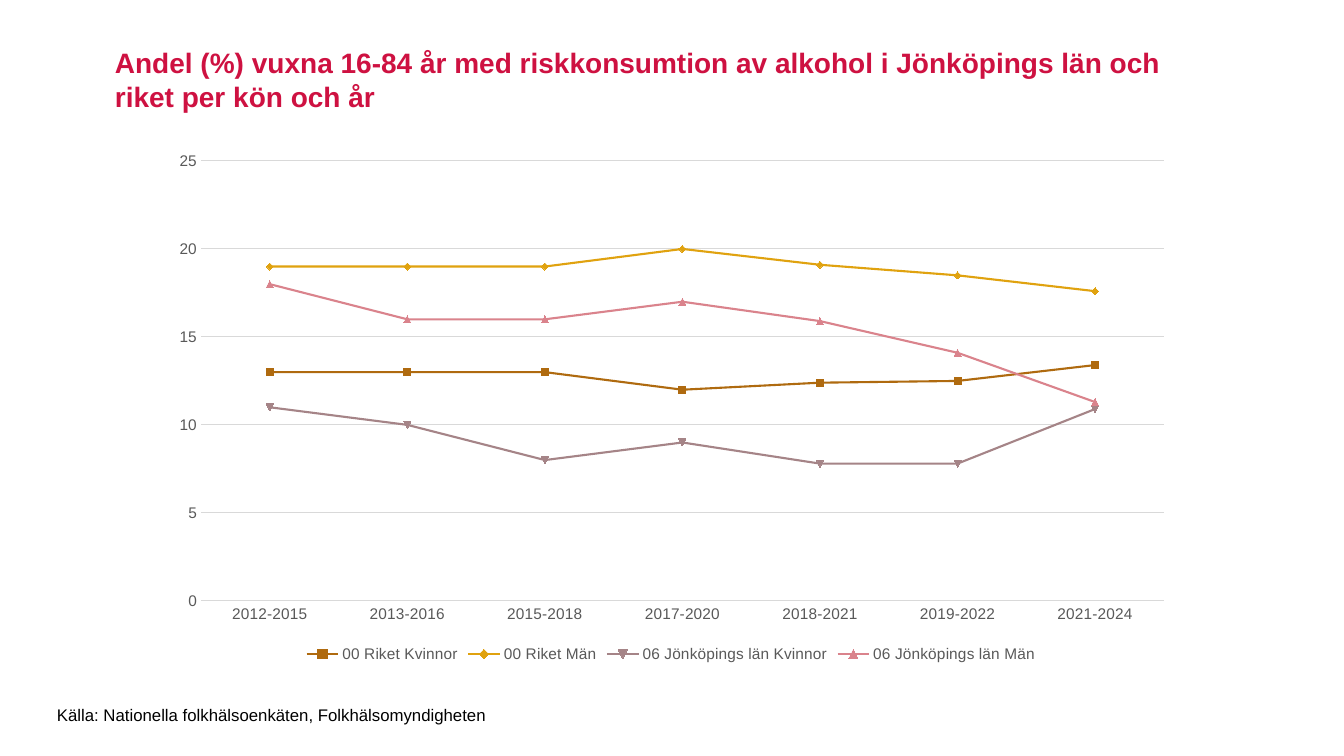
from lxml import etree
from pptx import Presentation
from pptx.chart.data import CategoryChartData
from pptx.dml.color import RGBColor
from pptx.enum.chart import XL_CHART_TYPE, XL_LEGEND_POSITION, XL_TICK_MARK
from pptx.enum.text import MSO_ANCHOR
from pptx.oxml.ns import qn
from pptx.util import Pt

LINES = XL_CHART_TYPE.LINE_MARKERS
BOTTOM = XL_LEGEND_POSITION.BOTTOM
NONE = XL_TICK_MARK.NONE
MIDDLE = MSO_ANCHOR.MIDDLE
TOP = MSO_ANCHOR.TOP

PX = 914400 / 100.8
THEME = {
    "font": "Arial",
    "title": (20, "CE1141"),
    "source": (12, "000000"),
    "label": (11, "595959"),
    "grid": "D9D9D9",
}
YEARS = ["2012-2015", "2013-2016", "2015-2018", "2017-2020",
         "2018-2021", "2019-2022", "2021-2024"]
SERIES = [
    ("00 Riket Kvinnor", "AF6A0F", (13, 13, 13, 12, 12.4, 12.5, 13.4)),
    ("00 Riket Män", "E0A20F", (19, 19, 19, 20, 19.1, 18.5, 17.6)),
    ("06 Jönköpings län Kvinnor", "A58487", (11, 10, 8, 9, 7.8, 7.8, 10.9)),
    ("06 Jönköpings län Män", "DA838C", (18, 16, 16, 17, 15.9, 14.1, 11.3)),
]
TEXTS = [
    ("title", (105, 31, 1080, 96), MIDDLE, True,
     "Andel (%) vuxna 16-84 år med riskkonsumtion av alkohol "
     "i Jönköpings län och riket per kön och år"),
    ("source", (47, 700, 457, 30), TOP, False,
     "Källa: Nationella folkhälsoenkäten, Folkhälsomyndigheten"),
]
CHART = (159, 142, 1024, 525)
PLOT = (201, 161, 963, 440)


def emu(box):
    return [round(n * PX) for n in box]


def style(font, role):
    size, color = THEME[role]
    font.name = THEME["font"]
    font.size = Pt(size)
    font.color.rgb = RGBColor.from_string(color)


deck = Presentation()
deck.slide_width, deck.slide_height = emu((1344, 756))
slide = deck.slides.add_slide(deck.slide_layouts[6])

for role, box, anchor, main, text in TEXTS:
    frame = slide.shapes.add_textbox(*emu(box)).text_frame
    frame.word_wrap = main
    frame.vertical_anchor = anchor
    frame.text = text
    font = frame.paragraphs[0].runs[0].font
    style(font, role)
    font.bold = main

data = CategoryChartData()
data.categories = YEARS
for name, color, values in SERIES:
    data.add_series(name, values)
chart = slide.shapes.add_chart(LINES, *emu(CHART), data).chart
style(chart.font, "label")
chart.has_title = False
chart.has_legend = True
chart.legend.position = BOTTOM
chart.legend.include_in_layout = False
style(chart.legend.font, "label")

grid = RGBColor.from_string(THEME["grid"])
years, share = chart.category_axis, chart.value_axis
for axis in (years, share):
    axis.major_tick_mark = axis.minor_tick_mark = NONE
    style(axis.tick_labels.font, "label")
share.minimum_scale, share.maximum_scale, share.major_unit = 0, 25, 5
share.has_major_gridlines = True
share.format.line.fill.background()
for rule in (years.format.line, share.major_gridlines.format.line):
    rule.color.rgb = grid
    rule.width = Pt(0.75)

chart.plots[0].vary_by_categories = False
for series, (name, color, values) in zip(chart.plots[0].series, SERIES):
    tone = RGBColor.from_string(color)
    series.smooth = False
    series.format.line.color.rgb = tone
    series.format.line.width = Pt(1.5)
    mark = series.marker
    mark.size = 5
    mark.format.fill.solid()
    mark.format.fill.fore_color.rgb = tone
    mark.format.line.color.rgb = tone

area = chart.plots[0]._element.getparent()
for old in area.findall(qn("c:layout")):
    area.remove(old)
layout = etree.Element(qn("c:layout"))
area.insert(0, layout)
manual = etree.SubElement(layout, qn("c:manualLayout"))
left, top, width, height = CHART
x, y, w, h = PLOT
for tag, value in (
    ("layoutTarget", "inner"), ("xMode", "edge"), ("yMode", "edge"),
    ("x", (x - left) / width), ("y", (y - top) / height),
    ("w", w / width), ("h", h / height),
):
    etree.SubElement(manual, qn("c:" + tag)).set("val", str(value))

deck.save("out.pptx")
